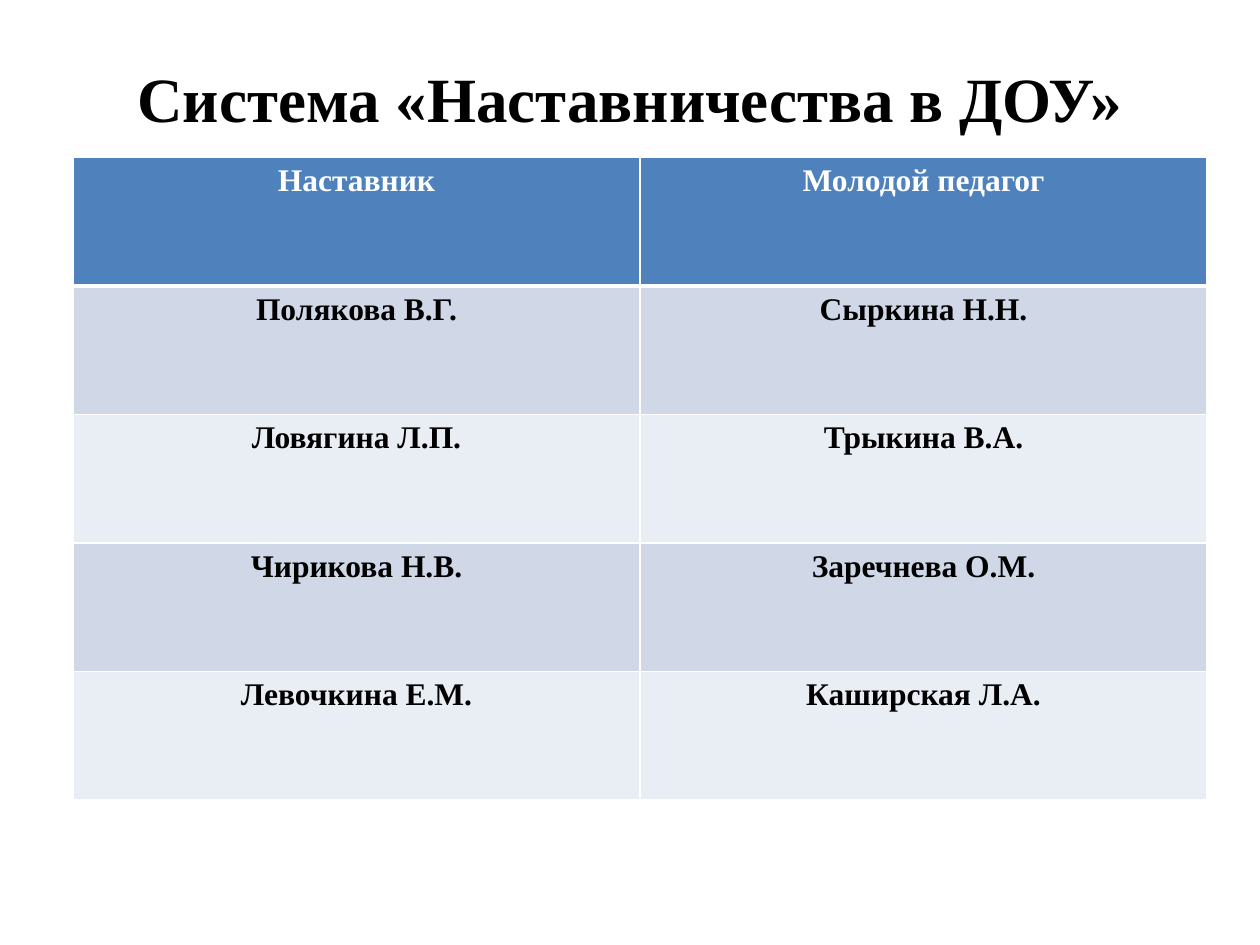
from lxml import etree
from pptx import Presentation
from pptx import util as u
from pptx.dml import color
from pptx.enum import text
from pptx.oxml import ns

ROWS = [
    ("Наставник", "Молодой педагог"),
    ("Полякова В.Г.", "Сыркина Н.Н."),
    ("Ловягина Л.П.", "Трыкина В.А."),
    ("Чирикова Н.В.", "Заречнева О.М."),
    ("Левочкина Е.М.", "Каширская Л.А."),
]
HEADER_FILL = "4F81BD"
BAND_FILLS = ("D0D8E8", "E9EDF4")


def rgb(value):
    return color.RGBColor.from_string(value)


class SlideBuilder:
    font = "Times New Roman"
    ink = "000000"
    white = "FFFFFF"

    def __init__(self, deck):
        self.slide = deck.slides.add_slide(deck.slide_layouts[5])

    def set_text(self, frame, words, size, ink):
        frame.text = words
        para = frame.paragraphs[0]
        para.alignment = text.PP_ALIGN.CENTER
        for span in para.runs:
            span.font.name = self.font
            span.font.size = u.Pt(size)
            span.font.bold = True
            span.font.color.rgb = rgb(ink)

    def title(self, words, left, top, width, height):
        box = self.slide.shapes.title
        box.left, box.top = u.Inches(left), u.Inches(top)
        box.width, box.height = u.Inches(width), u.Inches(height)
        box.text_frame.vertical_anchor = text.MSO_ANCHOR.MIDDLE
        self.set_text(box.text_frame, words, 36, self.ink)

    def border(self, cell, side, width):
        properties = cell._tc.get_or_add_tcPr()
        line = etree.SubElement(properties, ns.qn(f"a:ln{side}"), w=str(u.Pt(width)))
        fill = etree.SubElement(line, ns.qn("a:solidFill"))
        etree.SubElement(fill, ns.qn("a:srgbClr"), val=self.white)

    def table(self, rows, left, top, width, row_height):
        frame = self.slide.shapes.add_table(
            len(rows), len(rows[0]), u.Inches(left), u.Inches(top),
            u.Inches(width), u.Inches(row_height * len(rows)))
        grid = frame.table
        for r, names in enumerate(rows):
            grid.rows[r].height = u.Inches(row_height)
            for c, name in enumerate(names):
                cell = grid.cell(r, c)
                # The rule under the header is thicker than the others
                for side in "LRTB":
                    thick = (r, side) in ((0, "B"), (1, "T"))
                    self.border(cell, side, 3 if thick else 1)
                cell.fill.solid()
                cell.fill.fore_color.rgb = rgb(BAND_FILLS[(r - 1) % 2] if r else HEADER_FILL)
                self.set_text(cell.text_frame, name, 18, self.ink if r else self.white)


def main():
    deck = Presentation()
    deck.slide_width, deck.slide_height = u.Inches(10), u.Inches(7.5)
    page = SlideBuilder(deck)

    # Heading
    page.title("Система «Наставничества в ДОУ»", 0.5, 0.3, 9, 0.95)

    # Mentors and the young teachers paired with them
    page.table(ROWS, 0.58, 1.25, 9, 1.02)

    deck.save("out.pptx")


if __name__ == "__main__":
    main()
